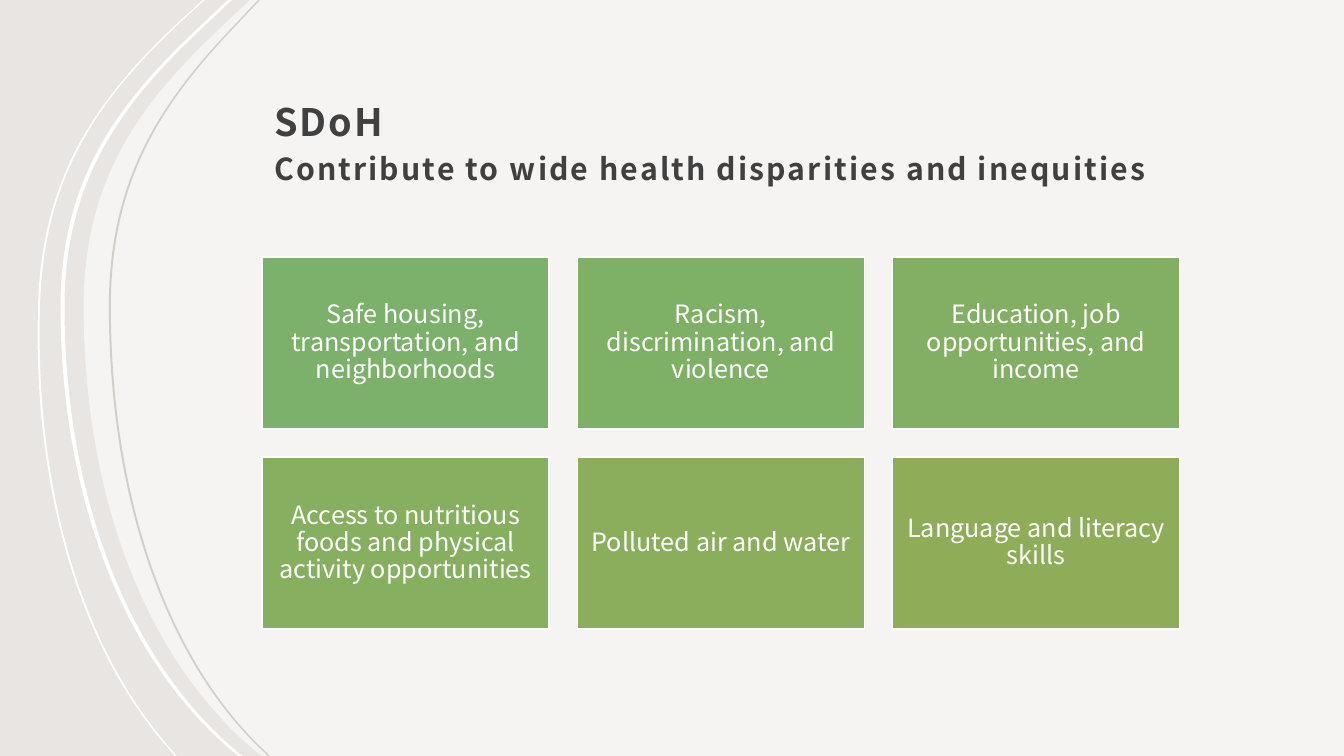
from lxml.etree import SubElement
from pptx import Presentation
from pptx.dml.color import RGBColor
from pptx.enum.shapes import MSO_SHAPE
from pptx.enum.text import MSO_ANCHOR, PP_ALIGN
from pptx.oxml.ns import qn
from pptx.util import Inches, Pt

WIDTH, HEIGHT = 13.33, 7.5
FONT = "Noto Sans CJK JP"
COLORS = {"background": "E8E5E2", "white": "FFFFFF", "hairline": "D4CEC8", "heading": "404040"}
CURVE_YS = (0, 0.35, 1.04, 1.79, 3.04, 4.92, 6.57, 7.48, 7.5)
OUTER_YS = (0, 0.24, 0.93, 1.68, 2.97, 4.8, 6.45, 7.47, 7.5)
PANEL_XS = (2.48, 2.11, 1.39, 0.83, 0.83, 0.83, 1.45, 2.57, 2.59)
BANDS = [
    ((2.01, 1.75, 1.02, 0.43, 0.38, 0.31, 0.78, 1.71, 1.73), OUTER_YS, 0.02, "white"),
    ((2.26, 1.89, 1.17, 0.6, 0.6, 0.6, 1.23, 2.34, 2.37), CURVE_YS, 0.04, "white"),
    ((2.56, 2.23, 1.59, 1.08, 1.08, 1.08, 1.64, 2.64, 2.66), CURVE_YS, 0.02, "hairline"),
]
CARDS = [
    ("Safe housing, transportation, and neighborhoods", "7BB16A"),
    ("Racism, discrimination, and violence", "7EB066"),
    ("Education, job opportunities, and income", "82AF63"),
    ("Access to nutritious foods and physical activity opportunities", "86AF5F"),
    ("Polluted air and water", "8AAE5C"),
    ("Language and literacy skills", "8FAD58"),
]


def rgb(name):
    """Return the colour for a palette name or a hex string."""
    return RGBColor.from_string(COLORS.get(name, name))


def apply(target, formats):
    """Set each attribute of the target from a dict of format values."""
    for attribute, value in formats.items():
        setattr(target, attribute, value)


def style_run(run, size, color, bold=False):
    """Give a run its font, size, weight and colour."""
    apply(run.font, {"name": FONT, "size": Pt(size), "bold": bold})
    run.font.color.rgb = rgb(color)


def sweep(knots):
    """Return the segments of a sweeping edge: line, two curves, line."""
    return [knots[:1], knots[1:2], knots[2:5], knots[5:8], knots[8:]]


def add_outline(slide, segments, color):
    """Draw a closed, filled outline; three-point segments become curves."""
    ends = [(Inches(x), Inches(y)) for x, y in (segment[-1] for segment in segments)]
    builder = slide.shapes.build_freeform(*ends[0])
    builder.add_line_segments(ends[1:], close=True)
    outline = builder.convert_to_shape()
    outline.shadow.inherit = False
    outline.fill.solid()
    outline.fill.fore_color.rgb = rgb(color)
    outline.line.fill.background()
    steps = list(outline._element.iter(qn("a:moveTo"), qn("a:lnTo")))
    for step, segment in zip(steps, segments):
        if len(segment) == 3:
            step.tag = qn("a:cubicBezTo")
            for position, (x, y) in enumerate(segment[:2]):
                control = SubElement(step, qn("a:pt"))
                control.set("x", str(Inches(x) - outline.left))
                control.set("y", str(Inches(y) - outline.top))
                step.insert(position, control)
    return outline


def add_backdrop(slide, width, height):
    """Draw the pale panel and the curved bands along its left side."""
    slide.background.fill.solid()
    slide.background.fill.fore_color.rgb = rgb("background")
    edge = sweep(list(zip(PANEL_XS, CURVE_YS)))
    panel = add_outline(slide, edge + [[(width, height)], [(width, 0)]], "white")
    tint = panel._element.spPr.find(qn("a:solidFill"))[0]
    SubElement(tint, qn("a:alpha"), val="60000")
    for xs, ys, thickness, color in BANDS:
        edge = list(zip(xs, ys))
        far_edge = [(x + thickness, y) for x, y in reversed(edge)]
        add_outline(slide, sweep(edge) + sweep(far_edge), color)


def add_heading(slide, left, top, width, height):
    """Place the heading lines at the bottom of their box."""
    heading = slide.shapes.add_textbox(*map(Inches, (left, top, width, height)))
    apply(heading.text_frame, {
        "word_wrap": True, "vertical_anchor": MSO_ANCHOR.BOTTOM,
        "margin_left": Inches(0.12), "margin_right": Inches(0.12),
        "margin_top": Inches(0.12), "margin_bottom": Inches(0.1),
    })
    paragraph = heading.text_frame.paragraphs[0]
    paragraph.line_spacing = 1.16
    for text, size in (("SDoH", 27),
                       ("Contribute to wide health disparities and inequities", 21.6)):
        paragraph.add_line_break()
        run = paragraph.add_run()
        run.text = text
        style_run(run, size, "heading", bold=True)
        run.font._element.set("spc", "150")


def add_card(slide, left, top, width, height, label, color):
    """Draw one coloured card with its centred label."""
    card = slide.shapes.add_shape(MSO_SHAPE.RECTANGLE, *map(Inches, (left, top, width, height)))
    card.shadow.inherit = False
    card.fill.solid()
    card.fill.fore_color.rgb = rgb(color)
    card.line.color.rgb = rgb("white")
    card.line.width = Pt(1)
    margins = {f"margin_{side}": Inches(0.07) for side in ("left", "top", "right", "bottom")}
    apply(card.text_frame, {"word_wrap": True, "vertical_anchor": MSO_ANCHOR.MIDDLE, **margins})
    paragraph = card.text_frame.paragraphs[0]
    apply(paragraph, {"alignment": PP_ALIGN.CENTER, "line_spacing": 0.9})
    run = paragraph.add_run()
    run.text = label
    style_run(run, 18, "white")


def add_card_grid(slide, left, top, width, height, columns=3, rows=2, gap=0.28):
    """Fill the box with evenly spaced cards."""
    card_width = (width - gap * (columns - 1)) / columns
    card_height = (height - gap * (rows - 1)) / rows
    for index, (label, color) in enumerate(CARDS):
        row, column = divmod(index, columns)
        add_card(slide, left + column * (card_width + gap), top + row * (card_height + gap),
                 card_width, card_height, label, color)


def main():
    """Build the slide and save it."""
    presentation = Presentation()
    apply(presentation, {"slide_width": Inches(WIDTH), "slide_height": Inches(HEIGHT)})
    slide = presentation.slides.add_slide(presentation.slide_layouts[6])
    add_backdrop(slide, WIDTH, HEIGHT)
    add_heading(slide, 2.6, 0.48, 9.18, 1.47)
    add_card_grid(slide, 2.6, 2.55, 9.1, 3.69)
    presentation.save("out.pptx")


if __name__ == "__main__":
    main()
